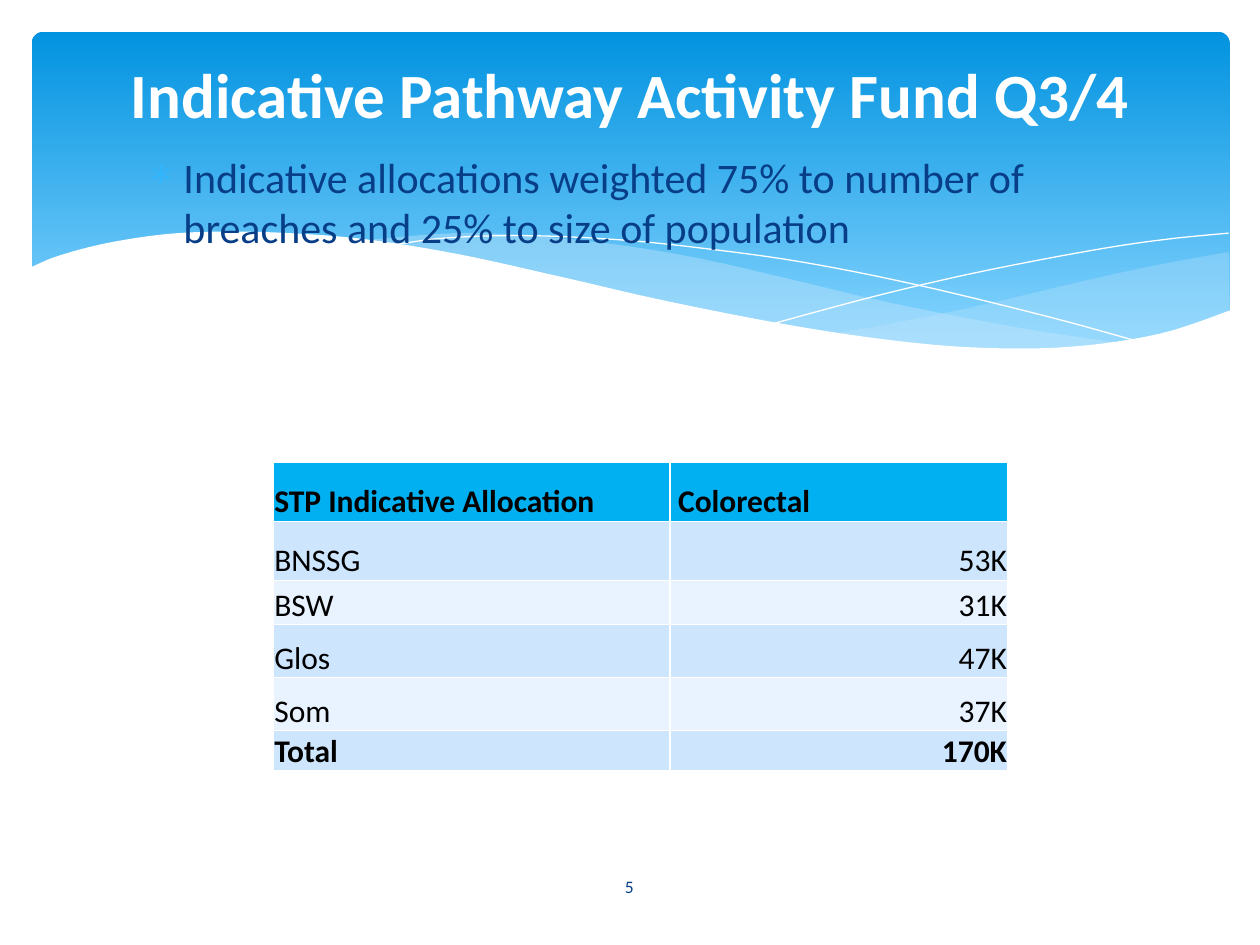
from lxml.etree import SubElement
from pptx import Presentation
from pptx.dml.color import RGBColor as Rgb
from pptx.enum.shapes import MSO_SHAPE as Kind
from pptx.enum.text import MSO_ANCHOR as Anchor, PP_ALIGN as Align
from pptx.oxml.ns import qn
from pptx.util import Cm, Pt

HUES = {
    "top": "0293E0", "low": "83D3FE", "mist": "C6E7FC", "white": "FFFFFF",
    "navy": "073E87", "mark": "31B6FD", "black": "000000",
    "head": "00B0F0", "odd": "CEE5FE", "even": "E8F3FF",
}
FONT = "Calibri"

RIGHT_TOP = [(24.13, 4.44), (22.75, 4.69), (21.23, 5.02), (19.15, 5.51),
             (17.29, 5.89), (16.15, 6.09)]
RIGHT_LOW = [(16.15, 6.09), (17.62, 6.27), (19.2, 6.4), (20.57, 6.4),
             (21.74, 6.29), (22.93, 6.04), (24.15, 5.63)]
MID_TOP = [(22.04, 6.29), (19.86, 5.96), (17.29, 5.46), (15.34, 5),
           (13.46, 4.57), (11.78, 4.29), (10.03, 4.11), (8.53, 4.06),
           (6.62, 4.21)]
MID_LOW = [(6.62, 4.21), (8.55, 4.52), (10.76, 5), (12.82, 5.46),
           (15.06, 5.91), (17.01, 6.22), (18.69, 6.4), (20.14, 6.42),
           (22.04, 6.29)]
FALL = [(7.21, 4.31), (8.33, 4.16), (9.93, 4.11), (11.78, 4.19),
        (13.48, 4.36), (15.51, 4.64), (17.83, 5.1), (20.47, 5.74),
        (22.4, 6.27)]
RISE = [(14.93, 5.89), (17.01, 5.33), (19.07, 4.85), (21.36, 4.41),
        (22.83, 4.19), (24.13, 4.06)]
EDGE = [(24.18, 5.61), (22.73, 6.09), (20.95, 6.35), (19.12, 6.37),
        (17.34, 6.22), (15.26, 5.91), (12.8, 5.43), (10.71, 4.95),
        (8.63, 4.49), (6.78, 4.19), (5.2, 4.06), (3.86, 4.03),
        (2.71, 4.08), (1.52, 4.26), (0.53, 4.52), (-0.06, 4.77)]
BASE = [(-0.06, 7.72), (24.18, 7.72)]

ROWS = [("STP Indicative Allocation", "Colorectal"), ("BNSSG", "53K"),
        ("BSW", "31K"), ("Glos", "47K"), ("Som", "37K"), ("Total", "170K")]
TALL = [1.19, 1.19, 0.89, 1.07, 1.07, 0.81]
WIDE = [8, 6.81]


def tint(name):
    """Return the named colour."""
    return Rgb.from_string(HUES[name])


def write(frame, text, size=18, hue="black", bold=False, align=Align.LEFT,
          anchor=Anchor.TOP, before=0):
    """Put formatted text in a frame and return its paragraph."""
    frame.word_wrap = True
    frame.vertical_anchor = anchor
    para = frame.paragraphs[0]
    para.alignment = align
    para.space_before = Pt(before)
    run = para.add_run()
    run.text = text
    font = run.font
    font.name, font.size, font.bold = FONT, Pt(size), bold
    font.color.rgb = tint(hue)
    return para


def curve(knots, steps=6):
    """Return points on a smooth curve through the knots."""
    ends = [knots[0], *knots, knots[-1]]
    points = [knots[0]]
    for a, b, c, d in zip(ends, ends[1:], ends[2:], ends[3:]):
        for step in range(1, steps + 1):
            t = step / steps
            points.append(tuple(
                q + t * (r - p) / 2
                + t * t * (2 * p - 5 * q + 4 * r - s) / 2
                + t ** 3 * (3 * q - p - 3 * r + s) / 2
                for p, q, r, s in zip(a, b, c, d)))
    return points


def trace(slide, box, points, fill=None, alpha=100):
    """Draw a filled outline, or a white hairline if there is no fill."""
    x, y = box[:2]
    spots = [(Cm(x + dx), Cm(y + dy)) for dx, dy in points]
    pen = slide.shapes.build_freeform(*spots[0], scale=1.0)
    pen.add_line_segments(spots[1:], close=bool(fill))
    shape = pen.convert_to_shape()
    shape.shadow.inherit = False
    if fill:
        shape.fill.solid()
        shape.fill.fore_color.rgb = tint(fill)
        shape.line.fill.background()
        color = shape.fill._xPr.find(".//" + qn("a:srgbClr"))
        SubElement(color, qn("a:alpha"), val=str(alpha * 1000))
    else:
        shape.fill.background()
        shape.line.color.rgb = tint("white")
        shape.line.width = Pt(0)


def banner(slide, box):
    """Draw the gradient band and its waves."""
    band = slide.shapes.add_shape(Kind.ROUNDED_RECTANGLE, *map(Cm, box))
    band.adjustments[0] = 0.034
    band.shadow.inherit = False
    band.line.fill.background()
    band.fill.gradient()
    band.fill.gradient_angle = 270
    for stop, name, place in zip(band.fill.gradient_stops, ("top", "low"), (0, 0.9)):
        stop.color.rgb = tint(name)
        stop.position = place
    trace(slide, box, curve(RIGHT_TOP) + curve(RIGHT_LOW), "mist", 29)
    trace(slide, box, curve(MID_TOP) + curve(MID_LOW), "mist", 40)
    trace(slide, box, curve(FALL))
    trace(slide, box, curve(RISE))
    trace(slide, box, curve(EDGE) + BASE, "white")


def label(slide, box, text, **style):
    """Add a text box and return its frame and paragraph."""
    frame = slide.shapes.add_textbox(*map(Cm, box)).text_frame
    return frame, write(frame, text, **style)


def title(slide, box, text):
    """Add the slide title."""
    frame, _ = label(slide, box, text, size=36, hue="white", bold=True,
                     align=Align.CENTER)
    frame.margin_top = Cm(0.18)


def point(slide, box, text):
    """Add a paragraph with a hanging bullet."""
    _, para = label(slide, box, text, size=24, hue="navy", before=4.8)
    props = para._p.get_or_add_pPr()
    props.set("marL", str(Cm(0.76)))
    props.set("indent", str(Cm(-0.76)))
    color = SubElement(props, qn("a:buClr"))
    SubElement(color, qn("a:srgbClr"), val=HUES["mark"])
    SubElement(props, qn("a:buChar"), char="∗")


def grid(slide, box):
    """Add the allocation table."""
    table = slide.shapes.add_table(len(ROWS), len(WIDE), *map(Cm, box)).table
    for col, width in zip(table.columns, WIDE):
        col.width = Cm(width)
    for i, (row, height) in enumerate(zip(ROWS, TALL)):
        table.rows[i].height = Cm(height)
        fill = "head" if i == 0 else "odd" if i % 2 else "even"
        for j, text in enumerate(row):
            cell = table.cell(i, j)
            cell.margin_left = Cm(0.16 if i == 0 and j else 0.02)
            cell.margin_right = cell.margin_top = Cm(0.02)
            cell.margin_bottom = 0
            cell.vertical_anchor = Anchor.BOTTOM
            cell.fill.solid()
            cell.fill.fore_color.rgb = tint(fill)
            write(cell.text_frame, text, bold=i in (0, len(ROWS) - 1),
                  align=Align.RIGHT if i and j else Align.LEFT,
                  anchor=Anchor.BOTTOM)


def main():
    """Build and save the slide."""
    deck = Presentation()
    deck.slide_width, deck.slide_height = Cm(25.4), Cm(19.05)
    slide = deck.slides.add_slide(deck.slide_layouts[6])
    banner(slide, (0.64, 0.64, 24.15, 6.86))
    point(slide, (2.69, 2.92, 20.57, 2.08),
          "Indicative allocations weighted 75% to number of breaches "
          "and 25% to size of population")
    label(slide, (11.07, 17.37, 3.23, 1.02), "5", size=10, hue="navy",
          align=Align.CENTER, anchor=Anchor.MIDDLE)
    title(slide, (1.27, 0.94, 22.86, 3.48), "Indicative Pathway Activity Fund Q3/4")
    grid(slide, (5.51, 9.32, sum(WIDE), sum(TALL)))
    deck.save("out.pptx")


if __name__ == "__main__":
    main()
